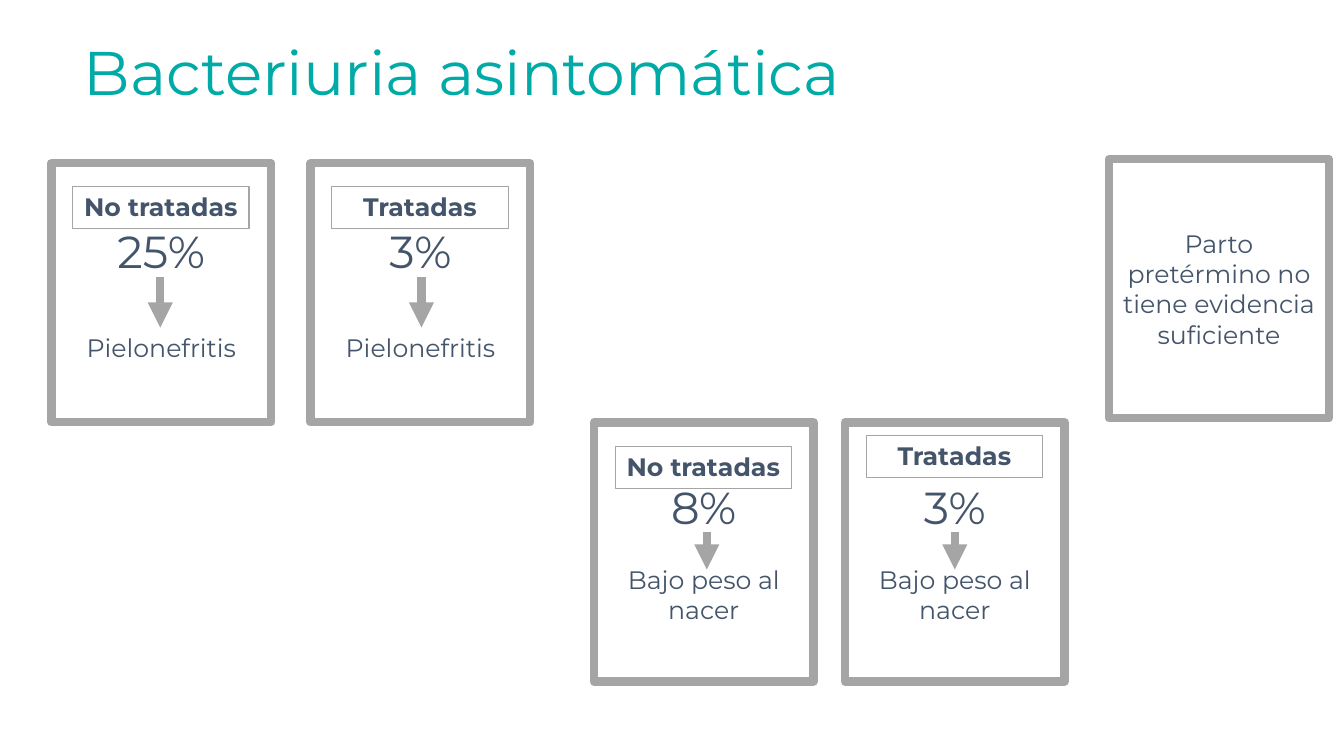
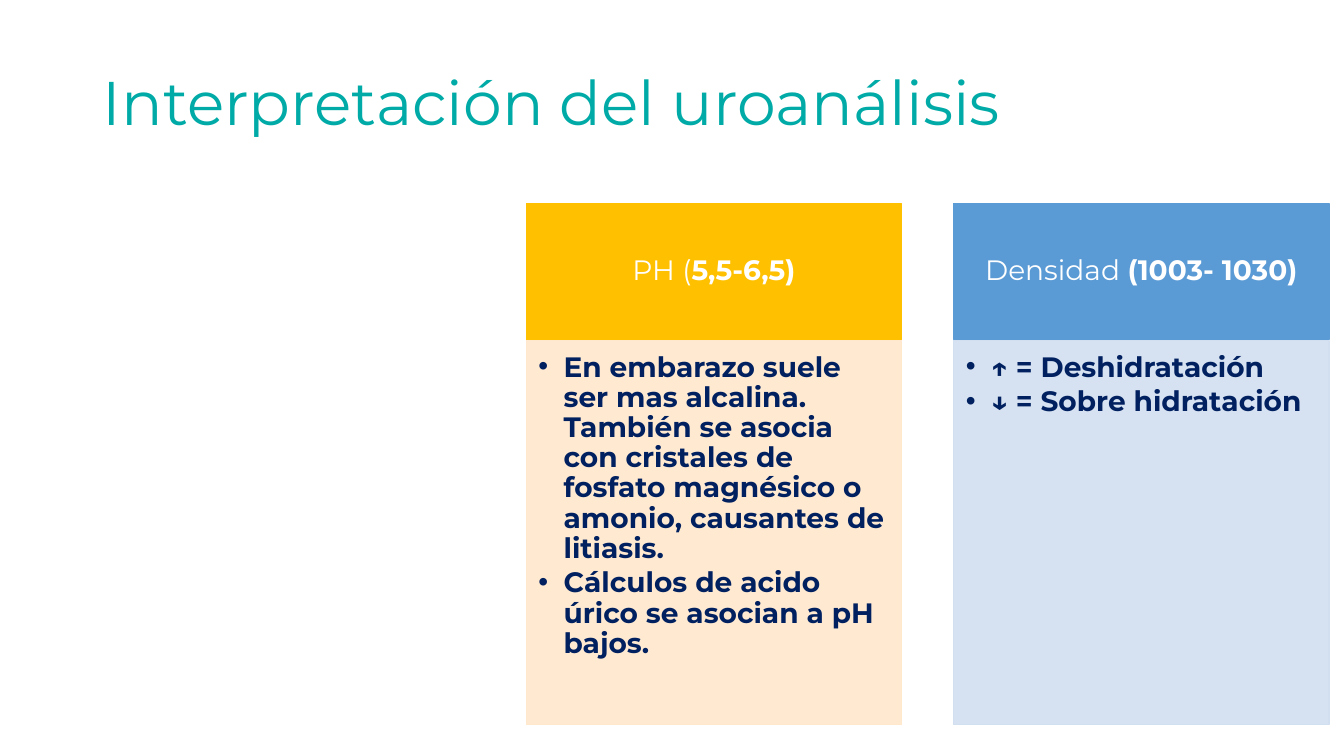
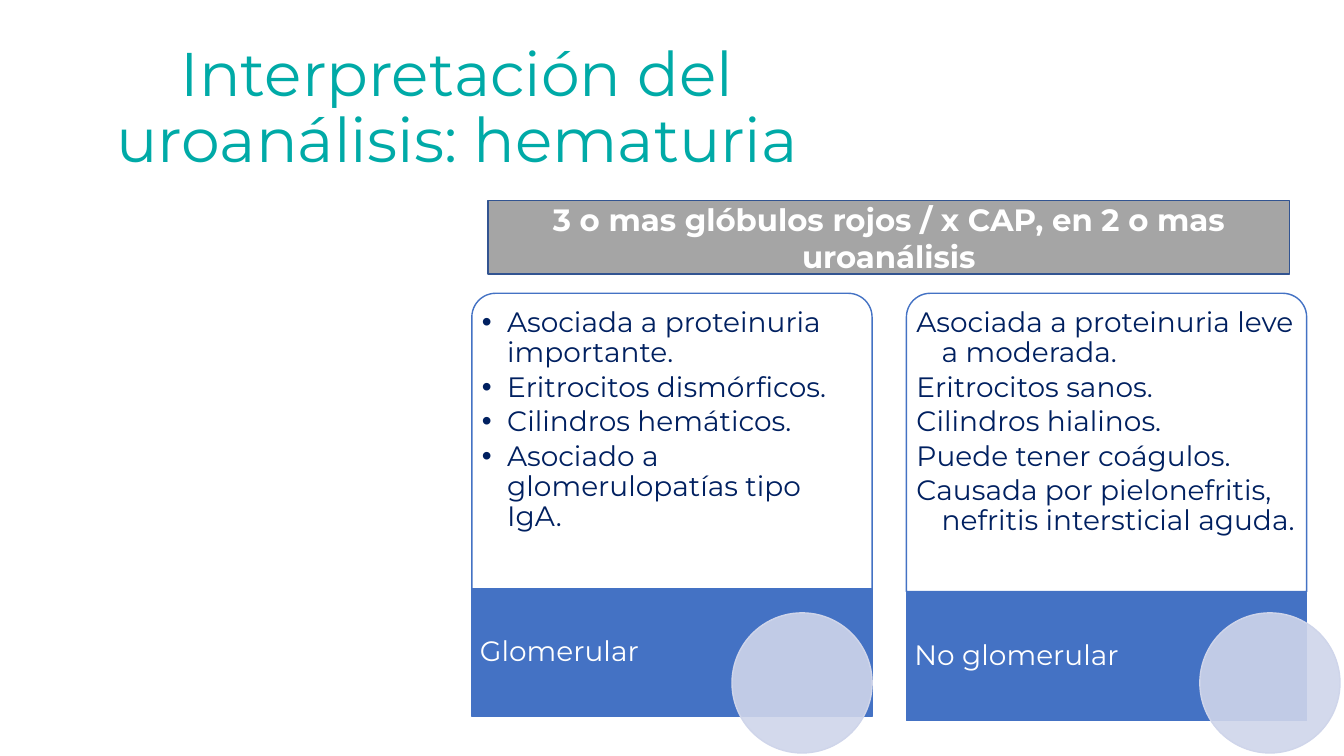
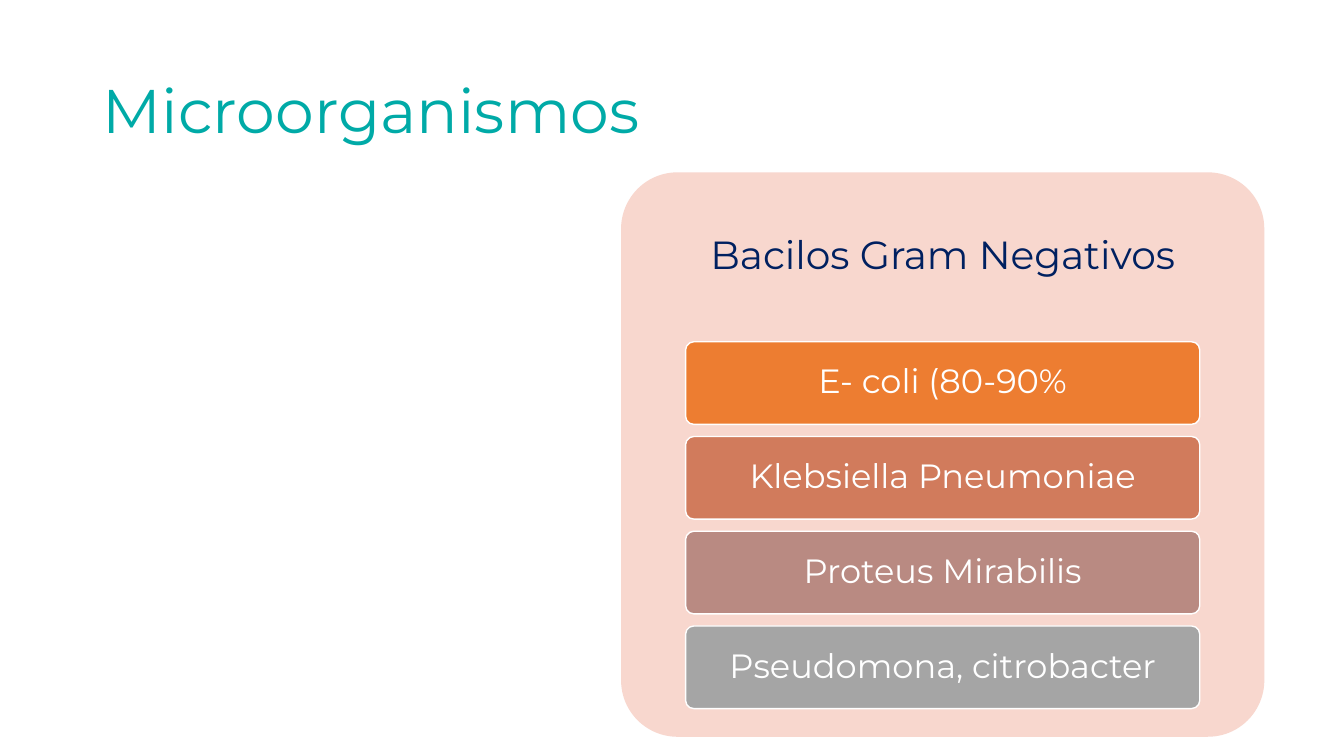
from lxml import etree
from pptx import Presentation
from pptx.dml.color import RGBColor
from pptx.enum.shapes import MSO_CONNECTOR, MSO_SHAPE
from pptx.enum.text import MSO_ANCHOR, MSO_AUTO_SIZE, PP_ALIGN
from pptx.oxml.ns import qn
from pptx.util import Emu, Pt

PX = 9144
SLIDE_SIZE = (1333, 750)
TITLE_ONLY, TWO_CONTENT = 5, 3
FONT = "Montserrat"
TEAL, NAVY, SLATE = "00AAA7", "002060", "44546A"
GRAY, WHITE, BLUE, LILAC = "A5A5A5", "FFFFFF", "4472C4", "CFD5EA"
LEFT, CENTER = PP_ALIGN.LEFT, PP_ALIGN.CENTER
TOP, MIDDLE = MSO_ANCHOR.TOP, MSO_ANCHOR.MIDDLE
RECTANGLE, OVAL = MSO_SHAPE.RECTANGLE, MSO_SHAPE.OVAL
ROUNDED, ROUNDED_TOP = MSO_SHAPE.ROUNDED_RECTANGLE, MSO_SHAPE.ROUND_2_SAME_RECTANGLE
STRAIGHT = MSO_CONNECTOR.STRAIGHT
NO_AUTOFIT = MSO_AUTO_SIZE.NONE
DEFAULT_MARGINS = (10, 5, 10, 5)

CARD_SIZE = (218, 257)
LABEL_SIZE = (175, 42)
OUTCOME_CARDS = [
    {"at": (51, 162), "label": "No tratadas", "label_top": 185, "rate": "25%",
     "outcome": "Pielonefritis", "gap": 39, "arrow": (159, 275, 325)},
    {"at": (308, 162), "label": "Tratadas", "label_top": 185, "rate": "3%",
     "outcome": "Pielonefritis", "gap": 39, "arrow": (418, 275, 325)},
    {"at": (589, 419), "label": "No tratadas", "label_top": 443, "rate": "8%",
     "outcome": "Bajo peso al nacer", "gap": 22, "arrow": (701, 528, 565)},
    {"at": (838, 419), "label": "Tratadas", "label_top": 432, "rate": "3%",
     "outcome": "Bajo peso al nacer", "gap": 22, "arrow": (947, 528, 565)},
]
PRETERM_AT = (1100, 158)
PRETERM_TEXT = "Parto pretérmino no tiene evidencia suficiente"

URINALYSIS_COLUMNS = [
    {"left": 522, "head": [("PH (", False), ("5,5-6,5)", True)],
     "head_color": "FFC000", "body_color": "FFE8CC",
     "items": [
         "En embarazo suele ser mas alcalina. También se asocia con cristales de "
         "fosfato magnésico o amonio, causantes de litiasis.",
         "Cálculos de acido úrico se asocian a pH bajos."]},
    {"left": 946, "head": [("Densidad ", False), ("(1003- 1030)", True)],
     "head_color": "5B9BD5", "body_color": "D2DFF0",
     "items": ["↑ = Deshidratación", "↓ = Sobre hidratación"]},
]

HEMATURIA_RULE = "3 o mas glóbulos rojos / x CAP, en 2 o mas uroanálisis"
HEMATURIA_TYPES = [
    {"left": 468, "name": "Glomerular", "name_top": 584, "circle_left": 726, "bullet": "•",
     "items": ["Asociada a proteinuria importante.", "Eritrocitos dismórficos.",
               "Cilindros hemáticos.", "Asociado a glomerulopatías tipo IgA."]},
    {"left": 899, "name": "No glomerular", "name_top": 588, "circle_left": 1190, "bullet": None,
     "items": ["Asociada a proteinuria leve a moderada.", "Eritrocitos sanos.",
               "Cilindros hialinos.", "Puede tener coágulos.",
               "Causada por pielonefritis, nefritis intersticial aguda."]},
]

BACTERIA_HEADING = "Bacilos Gram Negativos"
BACTERIA = [
    ("E- coli (80-90%", "ED7D31"),
    ("Klebsiella Pneumoniae", "D17B5C"),
    ("Proteus Mirabilis", "B98A82"),
    ("Pseudomona, citrobacter", GRAY),
]


def px(value):
    return Emu(value * PX)


def rgb(color):
    return RGBColor.from_string(color)


def set_all(target, values):
    for name, value in values.items():
        setattr(target, name, value)


def place(shape, box):
    set_all(shape, dict(zip(("left", "top", "width", "height"), map(px, box))))


def paint(shape, fill=None, line=None, line_width=1, opacity=100):
    shape.shadow.inherit = False
    if fill:
        shape.fill.solid()
        shape.fill.fore_color.rgb = rgb(fill)
        if opacity < 100:
            color = shape.element.spPr.find(".//" + qn("a:srgbClr"))
            etree.SubElement(color, qn("a:alpha"), val=str(opacity * 1000))
    else:
        shape.fill.background()
    if line:
        shape.line.color.rgb = rgb(line)
        shape.line.width = Pt(line_width)
    else:
        shape.line.fill.background()


def add_box(slide, kind, box, adjustments=(), **look):
    shape = slide.shapes.add_shape(kind, *map(px, box))
    for index, value in enumerate(adjustments):
        shape.adjustments[index] = value
    paint(shape, **look)
    return shape


def set_frame(shape, anchor=MIDDLE, margins=DEFAULT_MARGINS):
    frame = shape.text_frame
    set_all(frame, {"word_wrap": True, "auto_size": NO_AUTOFIT, "vertical_anchor": anchor})
    names = ("margin_left", "margin_top", "margin_right", "margin_bottom")
    set_all(frame, dict(zip(names, map(px, margins))))
    return frame


def add_run(paragraph, text, size, color, bold=False):
    run = paragraph.add_run()
    run.text = text
    set_all(run.font, {"name": FONT, "size": Pt(size), "bold": bold})
    run.font.color.rgb = rgb(color)


def write(shape, text, size, color, bold=False, align=CENTER, spacing=1.0, **frame_values):
    paragraph = set_frame(shape, **frame_values).paragraphs[0]
    set_all(paragraph, {"alignment": align, "line_spacing": spacing})
    runs = [(text, bold)] if isinstance(text, str) else text
    for run_text, run_bold in runs:
        add_run(paragraph, run_text, size, color, run_bold)


def write_list(body, box, items, bullet, bold=False, **frame_values):
    place(body, box)
    body.element.getparent().append(body.element)
    frame = set_frame(body, anchor=TOP, **frame_values)
    for index, item in enumerate(items):
        paragraph = frame.add_paragraph() if index else frame.paragraphs[0]
        properties = paragraph._p.get_or_add_pPr()
        properties.set("marL", str(px(25)))
        properties.set("indent", str(px(-25)))
        if bullet:
            etree.SubElement(properties, qn("a:buChar"), char=bullet)
        else:
            etree.SubElement(properties, qn("a:buNone"))
        set_all(paragraph, {"alignment": LEFT, "line_spacing": 0.9,
                            "space_before": Pt(0), "space_after": Pt(3)})
        add_run(paragraph, item, 20, NAVY, bold)


def add_slide(presentation, layout, title, box, align=LEFT):
    slide = presentation.slides.add_slide(presentation.slide_layouts[layout])
    place(slide.shapes.title, box)
    write(slide.shapes.title, title, 44, TEAL, align=align, spacing=0.9)
    return slide


def add_arrow(slide, x, top, bottom):
    arrow = slide.shapes.add_connector(STRAIGHT, px(x), px(top), px(x), px(bottom))
    arrow.line.color.rgb = rgb(GRAY)
    arrow.line.width = Pt(6)
    properties = arrow.element.spPr
    etree.SubElement(properties.find(qn("a:ln")), qn("a:tailEnd"), type="triangle")
    etree.SubElement(properties, qn("a:effectLst"))


def build_bacteriuria(presentation):
    slide = add_slide(presentation, TITLE_ONLY, "Bacteriuria asintomática", (73, 2, 1150, 145))
    label_inset = (CARD_SIZE[0] - LABEL_SIZE[0]) // 2
    for item in OUTCOME_CARDS:
        card = add_box(slide, RECTANGLE, item["at"] + CARD_SIZE, line=GRAY, line_width=6)
        write(card, item["rate"], 32, SLATE)
        outcome = card.text_frame.add_paragraph()
        set_all(outcome, {"alignment": CENTER, "space_before": Pt(item["gap"])})
        add_run(outcome, item["outcome"], 18, SLATE)
        label_at = (item["at"][0] + label_inset, item["label_top"])
        label = add_box(slide, RECTANGLE, label_at + LABEL_SIZE, line=GRAY, line_width=0.75)
        write(label, item["label"], 18, SLATE, bold=True, anchor=TOP)
        add_arrow(slide, *item["arrow"])
    card = add_box(slide, RECTANGLE, PRETERM_AT + CARD_SIZE, line=GRAY, line_width=6)
    write(card, PRETERM_TEXT, 18, SLATE)


def build_urinalysis(presentation):
    slide = add_slide(presentation, TWO_CONTENT, "Interpretación del uroanálisis",
                      (92, 32, 1150, 145))
    bodies = list(slide.placeholders)[1:]
    for column, body in zip(URINALYSIS_COLUMNS, bodies):
        left, tint = column["left"], column["body_color"]
        head = add_box(slide, RECTANGLE, (left, 202, 372, 135),
                       fill=column["head_color"], line=column["head_color"])
        write(head, column["head"], 20, WHITE, spacing=0.9, margins=(16, 9, 16, 9))
        write_list(body, (left, 338, 372, 381), column["items"], "•", bold=True,
                   margins=(12, 12, 16, 17))
        paint(body, fill=tint, line=tint, opacity=90)


def build_hematuria(presentation):
    slide = add_slide(presentation, TWO_CONTENT, "Interpretación del uroanálisis: hematuria",
                      (85, 36, 737, 145), align=CENTER)
    bodies = list(slide.placeholders)[1:]
    for kind, body in zip(HEMATURIA_TYPES, bodies):
        left = kind["left"]
        add_box(slide, ROUNDED_TOP, (left, 291, 397, 296), (0.08, 0),
                fill=WHITE, line=BLUE, opacity=90)
        write_list(body, (left + 7, 298, 383, 290), kind["items"], kind["bullet"],
                   margins=(3, 8, 3, 3))
        name = add_box(slide, RECTANGLE, (left, kind["name_top"], 397, 127),
                       fill=BLUE, line=BLUE)
        write(name, kind["name"], 20, WHITE, align=LEFT, spacing=0.9, margins=(8, 0, 3, 0))
        add_box(slide, OVAL, (kind["circle_left"], 608, 139, 139),
                fill=LILAC, line=LILAC, opacity=90)
    rule = add_box(slide, RECTANGLE, (484, 199, 795, 73), fill=GRAY, line="325491")
    write(rule, HEMATURIA_RULE, 22, WHITE, bold=True)


def build_microorganisms(presentation):
    slide = add_slide(presentation, TITLE_ONLY, "Microorganismos", (92, 40, 1150, 145))
    add_box(slide, ROUNDED, (616, 171, 638, 560), (0.1,), fill="F8D7CE")
    heading = slide.shapes.add_textbox(*map(px, (616, 171, 638, 168)))
    write(heading, BACTERIA_HEADING, 28, NAVY, spacing=0.9, margins=(12, 12, 12, 12))
    for index, (name, color) in enumerate(BACTERIA):
        bar = add_box(slide, ROUNDED, (680, 339 + 94 * index, 510, 82), (0.1,),
                      fill=color, line=WHITE)
        write(bar, name, 24, WHITE, spacing=0.9, margins=(7, 5, 7, 5))


def main():
    presentation = Presentation()
    presentation.slide_width, presentation.slide_height = map(px, SLIDE_SIZE)
    for build in (build_bacteriuria, build_urinalysis, build_hematuria, build_microorganisms):
        build(presentation)
    presentation.save("out.pptx")


if __name__ == "__main__":
    main()
